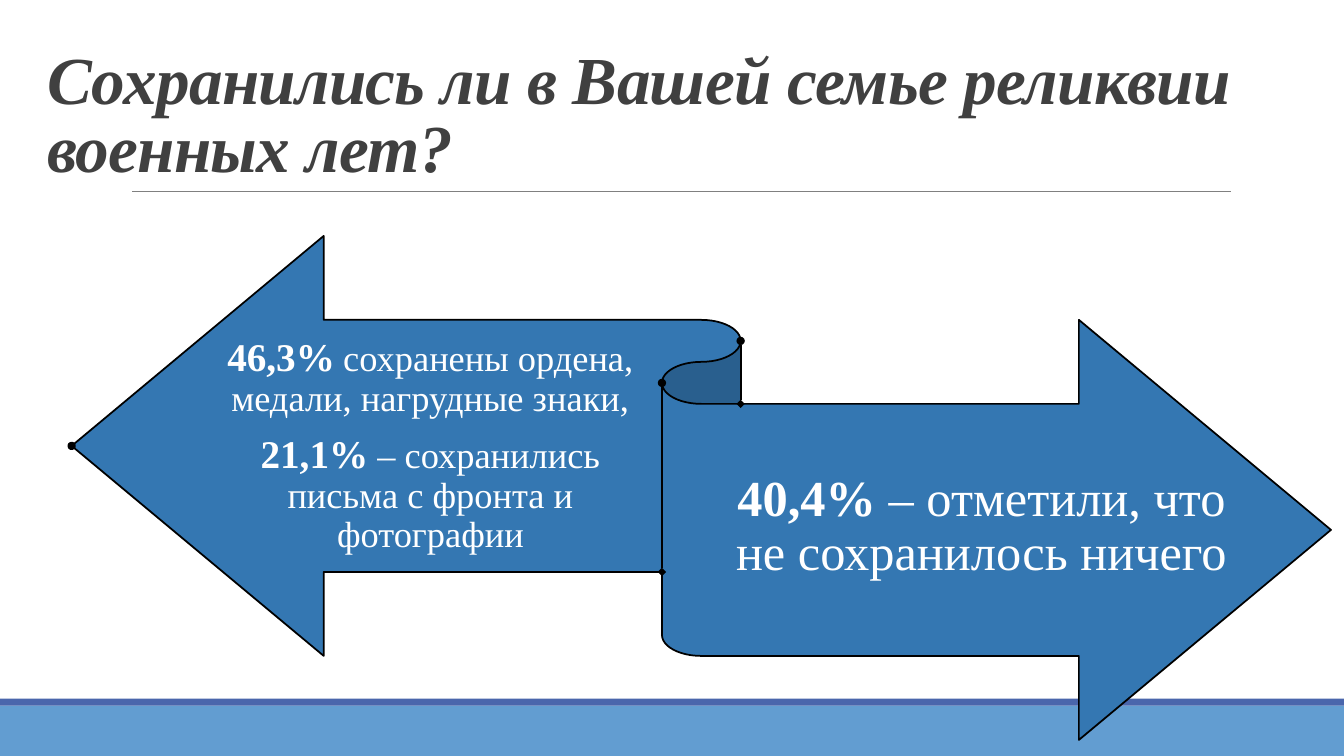
from dataclasses import dataclass
from typing import NamedTuple

from lxml.etree import SubElement
from pptx import Presentation
from pptx.dml.color import RGBColor
from pptx.enum.shapes import MSO_CONNECTOR as Connector, MSO_SHAPE as Preset
from pptx.enum.text import MSO_ANCHOR as Anchor, PP_ALIGN as Align
from pptx.oxml.ns import qn
from pptx.util import Inches, Pt

COLORS = {
    "band": "629DD1", "stripe": "4A66AC", "rule": "808080", "title": "404040",
    "ribbon": "3477B2", "outline": "000000", "label": "FFFFFF",
}
SERIF, SANS = "Times New Roman", "Calibri"
SLIDE_WIDTH, SLIDE_HEIGHT = Inches(13.33), Inches(7.5)


class Box(NamedTuple):
    """Left, top, width and height in percent of the slide."""
    left: float
    top: float
    width: float
    height: float

    def lengths(self) -> tuple[int, int, int, int]:
        return (across(self.left), down(self.top), across(self.width), down(self.height))


@dataclass(frozen=True)
class Run:
    text: str
    size: int
    bold: bool = False
    italic: bool = False
    font: str = SERIF
    tracking: float = 0


@dataclass(frozen=True)
class TextBlock:
    box: Box
    paragraphs: list[list[Run]]
    color: str = "label"
    align: Align = Align.CENTER
    anchor: Anchor = Anchor.MIDDLE
    side_inset: float = 0
    top_inset: float = 0.05
    bottom_inset: float = 0.05
    line_spacing: float = 0.9
    space_after: float = 0


@dataclass(frozen=True)
class Panel:
    box: Box
    preset: Preset
    fill: str
    outline: str | None = None


def across(percent: float) -> int:
    return round(SLIDE_WIDTH * percent / 100)


def down(percent: float) -> int:
    return round(SLIDE_HEIGHT * percent / 100)


def rgb(name: str) -> RGBColor:
    return RGBColor.from_string(COLORS[name])


def draw_panel(slide, panel: Panel):
    shape = slide.shapes.add_shape(panel.preset, *panel.box.lengths())
    shape.shadow.inherit = False
    shape.fill.solid()
    shape.fill.fore_color.rgb = rgb(panel.fill)
    if panel.outline:
        shape.line.color.rgb = rgb(panel.outline)
        shape.line.width = Pt(1.25)
    else:
        shape.line.fill.background()
    return shape


def add_line_ends(shape, head: str, tail: str) -> None:
    line = shape.line._get_or_add_ln()
    SubElement(line, qn("a:headEnd"), type=head)
    SubElement(line, qn("a:tailEnd"), type=tail)


def draw_rule(slide, left: float, right: float, top: float) -> None:
    rule = slide.shapes.add_connector(
        Connector.STRAIGHT, across(left), down(top), across(right), down(top))
    rule.line.color.rgb = rgb("rule")
    rule.line.width = Pt(0.5)
    SubElement(rule._element.spPr, qn("a:effectLst"))


def draw_text(slide, block: TextBlock) -> None:
    frame = slide.shapes.add_textbox(*block.box.lengths()).text_frame
    frame.word_wrap = True
    frame.vertical_anchor = block.anchor
    frame.margin_left = frame.margin_right = Inches(block.side_inset)
    frame.margin_top = Inches(block.top_inset)
    frame.margin_bottom = Inches(block.bottom_inset)
    for index, runs in enumerate(block.paragraphs):
        paragraph = frame.add_paragraph() if index else frame.paragraphs[0]
        paragraph.alignment = block.align
        paragraph.line_spacing = block.line_spacing
        paragraph.space_after = Pt(block.space_after)
        for item in runs:
            run = paragraph.add_run()
            run.text = item.text
            run.font.name = item.font
            run.font.size = Pt(item.size)
            run.font.bold = item.bold
            run.font.italic = item.italic
            run.font.color.rgb = rgb(block.color)
            if item.tracking:
                run.font._element.set("spc", str(round(item.tracking * 100)))


FOOTER = [
    Panel(Box(0, 93.33, 100, 6.67), Preset.RECTANGLE, "band"),
    Panel(Box(0, 92.4, 100, 0.93), Preset.RECTANGLE, "stripe"),
]
RIBBON = Panel(Box(5.33, 31.2, 93.7, 66.67), Preset.LEFT_RIGHT_RIBBON, "ribbon", "outline")
TITLE = TextBlock(
    Box(2.78, 3.87, 92.12, 21.47),
    [[Run("Сохранились ли в Вашей семье реликвии военных лет?", 48,
          bold=True, italic=True, tracking=-0.5)]],
    color="title", align=Align.LEFT, anchor=Anchor.BOTTOM,
    side_inset=0.1, line_spacing=0.85)
ANSWERS = [
    TextBlock(
        Box(16.58, 42.8, 30.91, 32.67),
        [[Run("46,3%", 28, bold=True), Run(" ", 26, font=SANS),
          Run("сохранены ордена, медали, нагрудные знаки,", 26)],
         [Run("21,1%", 28, bold=True),
          Run(" – сохранились письма с фронта и фотографии", 26)]],
        top_inset=0.11, bottom_inset=0.12, space_after=11),
    TextBlock(
        Box(54.16, 51.2, 37.73, 37.2),
        [[Run("40,4%", 36, bold=True),
          Run(" – отметили, что не сохранилось ничего", 36)]],
        top_inset=0.14, bottom_inset=0.15, space_after=14),
]


def main() -> None:
    presentation = Presentation()
    presentation.slide_width, presentation.slide_height = SLIDE_WIDTH, SLIDE_HEIGHT
    slide = presentation.slides.add_slide(presentation.slide_layouts[6])

    # Footer bands and the rule under the title
    for panel in FOOTER:
        draw_panel(slide, panel)
    draw_rule(slide, left=9.83, right=91.6, top=25.33)

    # Title
    draw_text(slide, TITLE)

    # Two-way ribbon with an answer on each side
    add_line_ends(draw_panel(slide, RIBBON), head="oval", tail="diamond")
    for answer in ANSWERS:
        draw_text(slide, answer)

    presentation.save("out.pptx")


if __name__ == "__main__":
    main()
